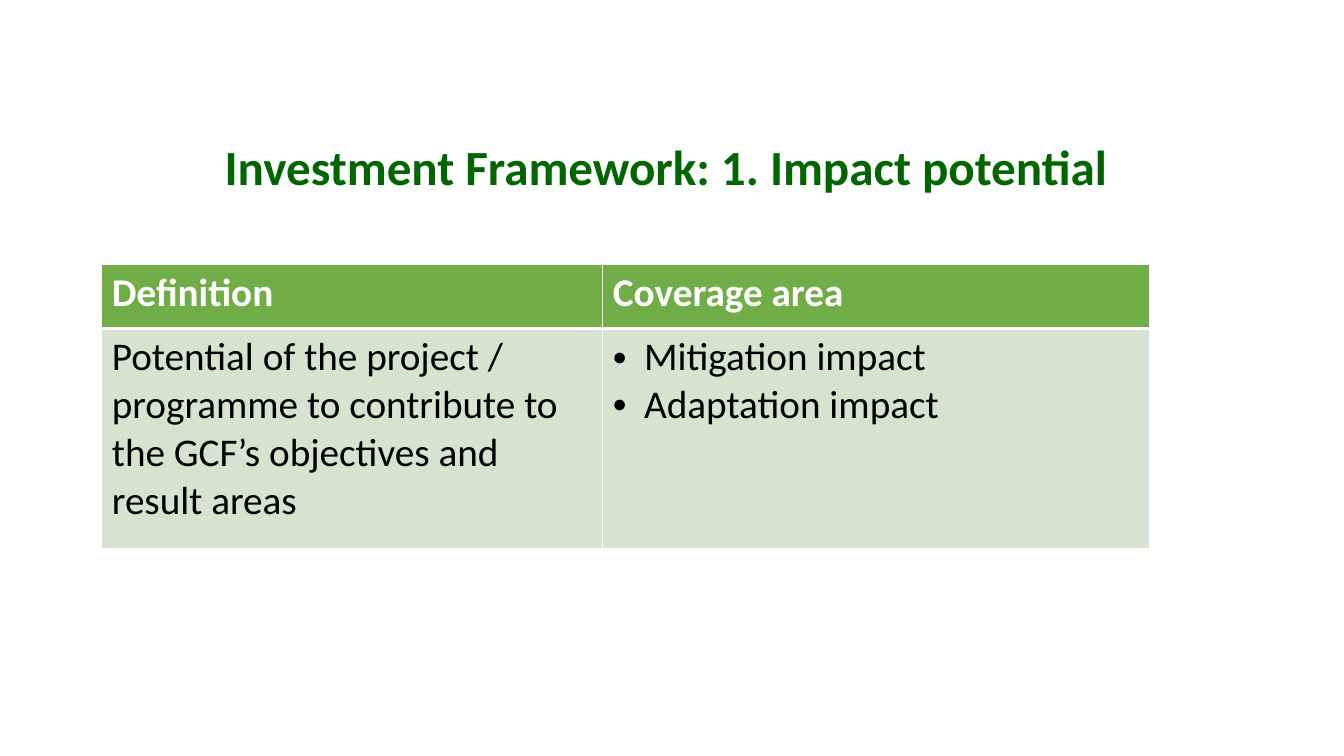
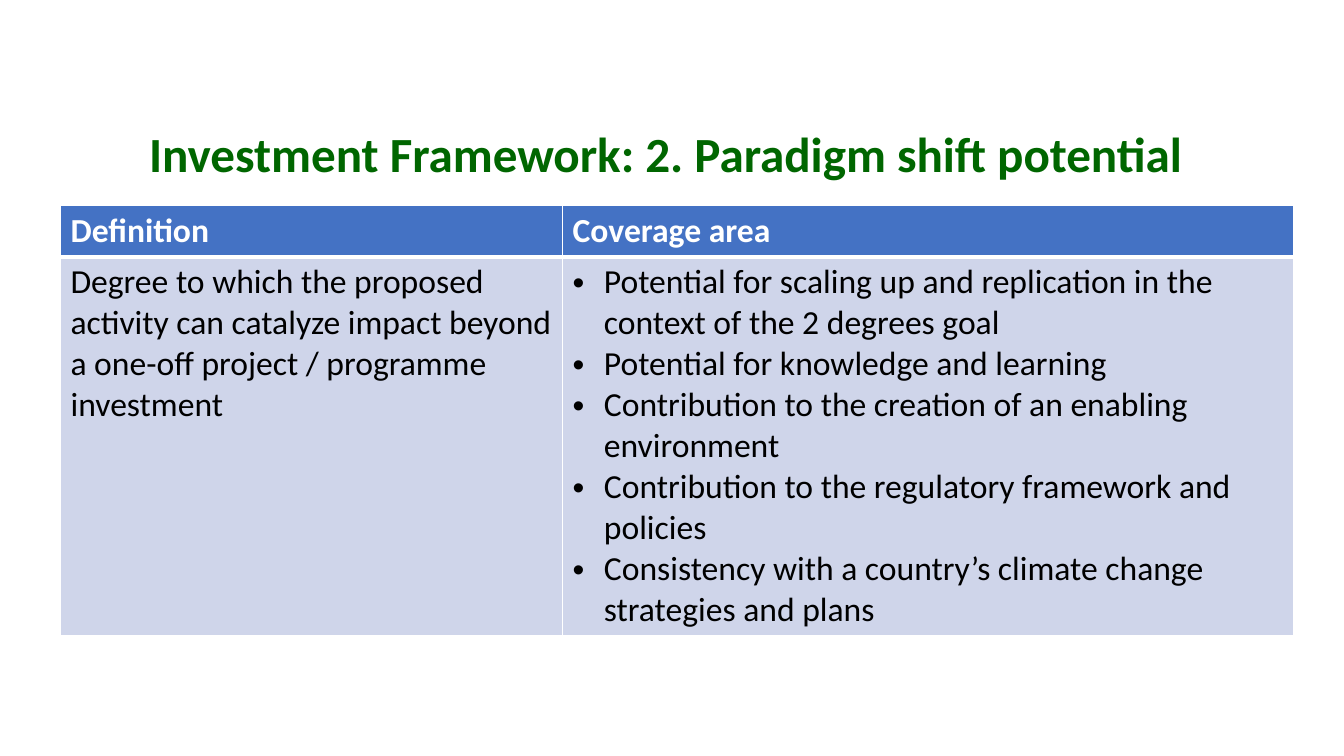
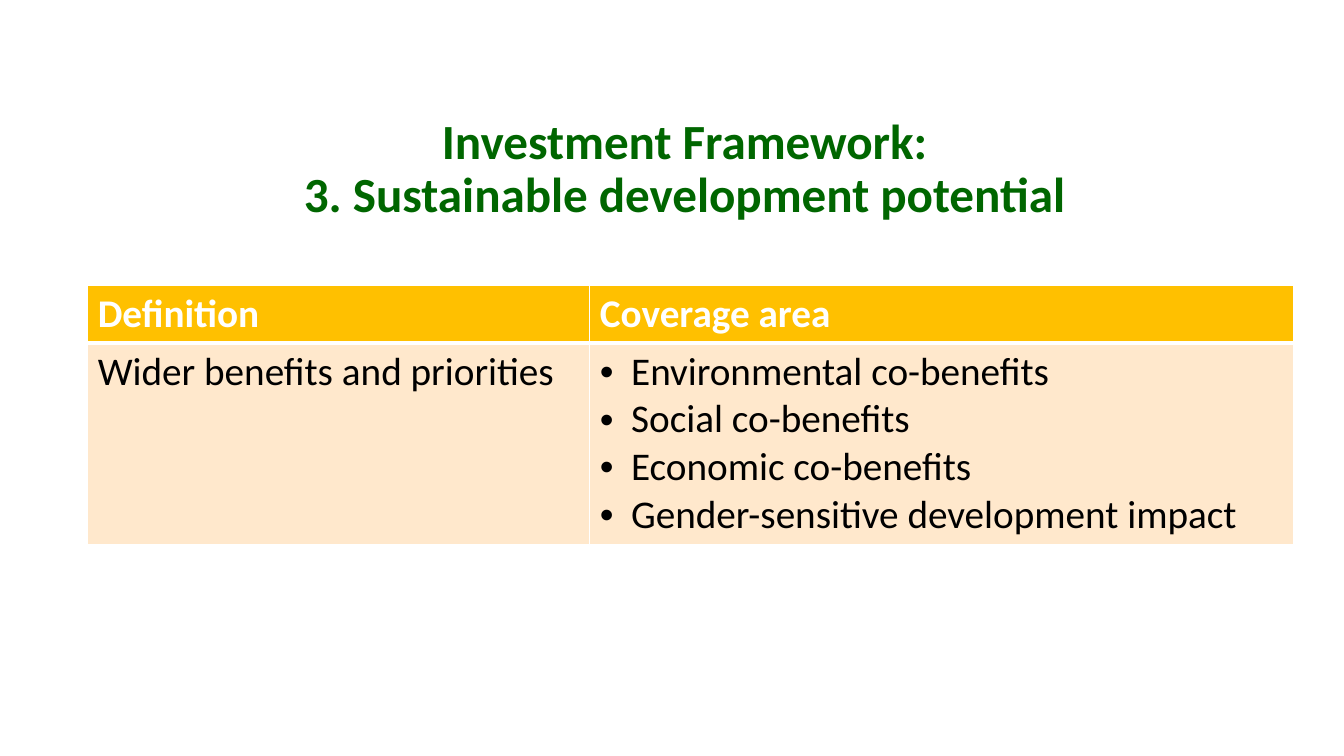
from lxml.etree import SubElement
from pptx import Presentation
from pptx.dml.color import RGBColor
from pptx.enum.text import MSO_ANCHOR, PP_ALIGN
from pptx.oxml.ns import qn
from pptx.util import Inches, Pt

FONT = "Calibri"
COLORS = {
    "title": "006600", "white": "FFFFFF", "black": "000000",
    "green": "70AD47", "green_tint": "D5E3CF",
    "blue": "4472C4", "blue_tint": "CFD5EA",
    "gold": "FFC000", "gold_tint": "FFE8CC",
}
TITLE_SIZE = 35.1
TITLE_HEIGHT = 1.25
BULLET_INDENT = 0.31
THIN, THICK = 1, 3
HEADINGS = ("Definition", "Coverage area")

CRITERIA = [
    {
        "title": ["Investment Framework: 1. Impact potential"],
        "title_box": (2.13, 1.37, 9), "align": PP_ALIGN.LEFT,
        "color": "green", "size": 28, "table_at": (1.01, 2.62),
        "columns": (4.97, 5.42), "rows": (0.64, 2.18),
        "definition": "Potential of the project / programme to contribute to "
                      "the GCF’s objectives and result areas",
        "coverage": ["Mitigation impact", "Adaptation impact"],
    },
    {
        "title": ["Investment Framework: 2. Paradigm shift potential"],
        "title_box": (1.38, 1.24, 11.96), "align": PP_ALIGN.LEFT,
        "color": "blue", "size": 24, "table_at": (0.6, 2.04),
        "columns": (4.98, 7.25), "rows": (0.51, 3.76),
        "definition": "Degree to which the proposed activity can catalyze impact "
                      "beyond a one-off project / programme investment",
        "coverage": [
            "Potential for scaling up and replication in the context of the 2 degrees goal",
            "Potential for knowledge and learning",
            "Contribution to the creation of an enabling environment",
            "Contribution to the regulatory framework and policies",
            "Consistency with a country’s climate change strategies and plans",
        ],
    },
    {
        "title": ["Investment Framework:", "3. Sustainable development potential"],
        "title_box": (1.91, 1.11, 9.76), "align": PP_ALIGN.CENTER,
        "color": "gold", "size": 28, "table_at": (0.87, 2.83),
        "columns": (4.98, 6.98), "rows": (0.57, 2),
        "definition": "Wider benefits and priorities",
        "coverage": ["Environmental co-benefits", "Social co-benefits",
                     "Economic co-benefits", "Gender-sensitive development impact"],
    },
]


def rgb(name):
    return RGBColor.from_string(COLORS[name])


def add_run(paragraph, text, size, color, bold):
    run = paragraph.add_run()
    run.text = text
    run.font.name = FONT
    run.font.size = Pt(size)
    run.font.bold = bold
    run.font.color.rgb = rgb(color)


def add_title(slide, criterion):
    left, top, width = map(Inches, criterion["title_box"])
    box = slide.shapes.add_textbox(left, top, width, Inches(TITLE_HEIGHT))
    frame = box.text_frame
    frame.word_wrap = True
    frame.vertical_anchor = MSO_ANCHOR.TOP
    paragraph = frame.paragraphs[0]
    paragraph.alignment = criterion["align"]
    paragraph.line_spacing = 0.9
    for index, line in enumerate(criterion["title"]):
        if index:
            paragraph.add_line_break()
        add_run(paragraph, line, TITLE_SIZE, "title", True)


def set_borders(cell, top, bottom):
    properties = cell._tc.get_or_add_tcPr()
    for side, width in (("L", THIN), ("R", THIN), ("T", top), ("B", bottom)):
        line = SubElement(properties, qn(f"a:ln{side}"), w=str(Pt(width)))
        fill = SubElement(line, qn("a:solidFill"))
        SubElement(fill, qn("a:srgbClr"), val=COLORS["white"])


def add_bullet(paragraph):
    properties = paragraph._p.get_or_add_pPr()
    indent = Inches(BULLET_INDENT)
    properties.set("marL", str(indent))
    properties.set("indent", str(-indent))
    SubElement(properties, qn("a:buFont"), typeface="Arial")
    SubElement(properties, qn("a:buChar"), char="•")


def fill_cell(cell, lines, size, fill, header=False, bulleted=False):
    set_borders(cell, THIN if header else THICK, THICK if header else THIN)
    cell.fill.solid()
    cell.fill.fore_color.rgb = rgb(fill)
    frame = cell.text_frame
    for index, line in enumerate(lines):
        paragraph = frame.add_paragraph() if index else frame.paragraphs[0]
        if bulleted:
            add_bullet(paragraph)
        add_run(paragraph, line, size, "white" if header else "black", header)


def add_criterion_table(slide, criterion):
    columns, rows = criterion["columns"], criterion["rows"]
    left, top = map(Inches, criterion["table_at"])
    table = slide.shapes.add_table(len(rows), len(columns), left, top,
                                   Inches(sum(columns)), Inches(sum(rows))).table
    table.horz_banding = False
    for column, width in zip(table.columns, columns):
        column.width = Inches(width)
    for row, height in zip(table.rows, rows):
        row.height = Inches(height)

    size, color = criterion["size"], criterion["color"]
    tint = f"{color}_tint"
    for index, heading in enumerate(HEADINGS):
        fill_cell(table.cell(0, index), [heading], size, color, header=True)
    fill_cell(table.cell(1, 0), [criterion["definition"]], size, tint)
    fill_cell(table.cell(1, 1), criterion["coverage"], size, tint, bulleted=True)


def main():
    presentation = Presentation()
    presentation.slide_width = Inches(13.33)
    presentation.slide_height = Inches(7.5)
    blank = presentation.slide_layouts[6]
    for criterion in CRITERIA:
        slide = presentation.slides.add_slide(blank)
        add_title(slide, criterion)
        add_criterion_table(slide, criterion)
    presentation.save("out.pptx")


if __name__ == "__main__":
    main()
